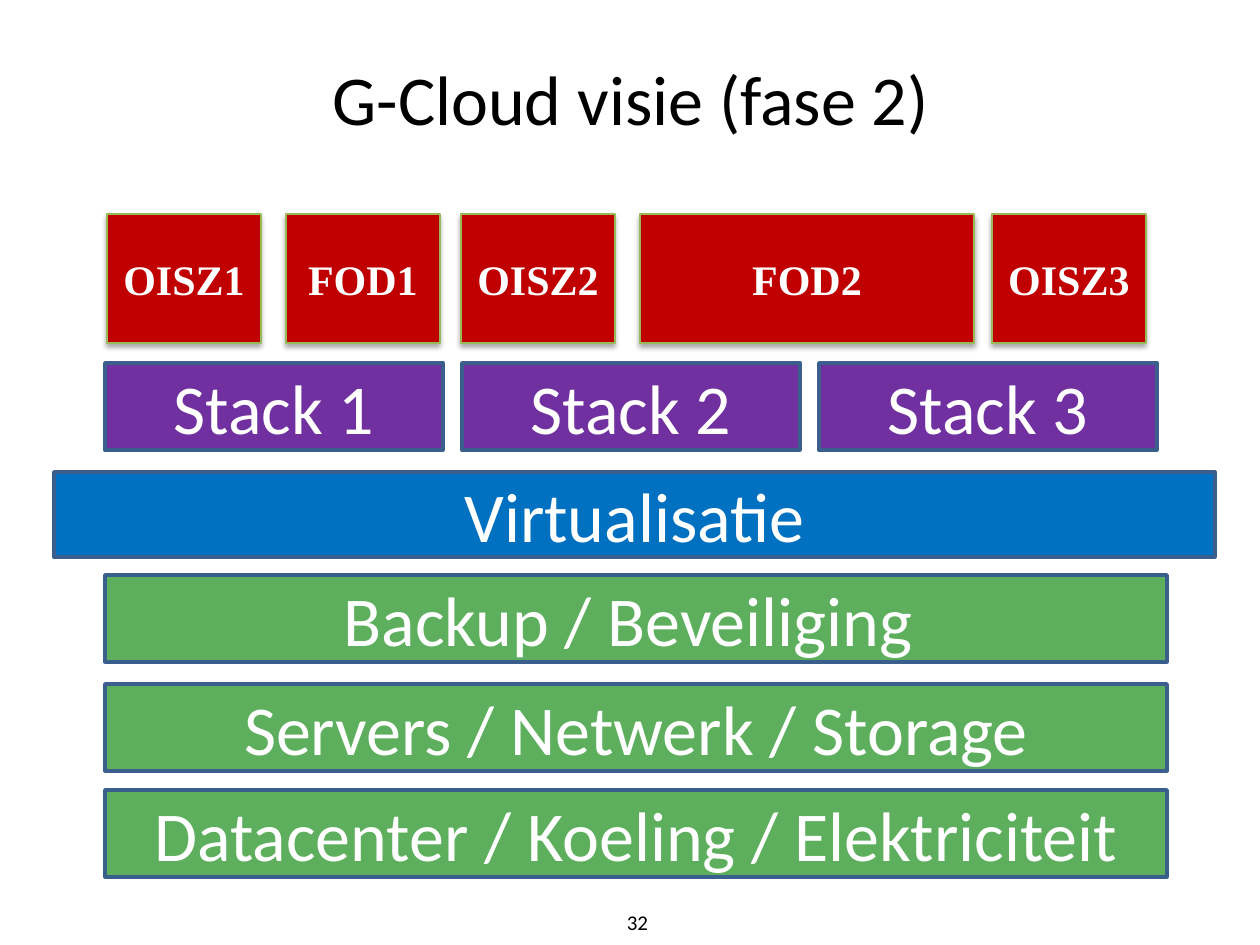
from dataclasses import dataclass

import pptx
import pptx.dml.color
import pptx.enum.shapes
import pptx.enum.text
import pptx.oxml
import pptx.oxml.ns
import pptx.util

SCALE = 914400 / 126  # EMU in one px


@dataclass(frozen=True)
class Theme:
    sans: str = "Calibri"
    serif: str = "Times New Roman"
    black: str = "000000"
    white: str = "FFFFFF"
    red: str = "C00000"
    purple: str = "7030A0"
    blue: str = "0070C0"
    green: str = "5DAF5D"
    edge: str = "3A5F8C"
    lime: str = "98B955"
    big: int = 40
    mid: int = 24
    small: int = 12


@dataclass(frozen=True)
class Box:
    text: str
    left: int
    top: int
    width: int
    height: int


@dataclass(frozen=True)
class Style:
    fill: str
    line: str
    weight: float
    font: str
    size: int
    bold: bool = False
    shadow: bool = False


THEME = Theme()


def emu(px: int) -> int:
    return round(px * SCALE)


def color(code: str) -> pptx.dml.color.RGBColor:
    return pptx.dml.color.RGBColor.from_string(code)


def place(shape, box: Box) -> None:
    shape.left, shape.top = emu(box.left), emu(box.top)
    shape.width, shape.height = emu(box.width), emu(box.height)


def write(shape, text: str, font: str, size: int, code: str, bold: bool = False) -> None:
    frame = shape.text_frame
    frame.text = text
    frame.word_wrap = True
    frame.auto_size = pptx.enum.text.MSO_AUTO_SIZE.NONE
    frame.vertical_anchor = pptx.enum.text.MSO_ANCHOR.MIDDLE
    line = frame.paragraphs[0]
    line.alignment = pptx.enum.text.PP_ALIGN.CENTER
    face = line.runs[0].font
    face.name, face.size, face.bold = font, pptx.util.Pt(size), bold
    face.color.rgb = color(code)


def cast(shape) -> None:
    """Put a soft shadow below the shape."""
    blur, dist = pptx.util.Pt(3.1), pptx.util.Pt(1.8)
    effect = shape._element.spPr.find(pptx.oxml.ns.qn("a:effectLst"))
    effect.append(pptx.oxml.parse_xml(
        f'<a:outerShdw {pptx.oxml.ns.nsdecls("a")} blurRad="{blur}" dist="{dist}" '
        f'dir="5400000" rotWithShape="0"><a:srgbClr val="{THEME.black}">'
        '<a:alpha val="35000"/></a:srgbClr></a:outerShdw>'))


def draw(slide, box: Box, style: Style) -> None:
    shape = slide.shapes.add_shape(
        pptx.enum.shapes.MSO_SHAPE.RECTANGLE, 0, 0, 0, 0)
    place(shape, box)
    shape.shadow.inherit = False
    shape.fill.solid()
    shape.fill.fore_color.rgb = color(style.fill)
    shape.line.color.rgb = color(style.line)
    shape.line.width = pptx.util.Pt(style.weight)
    if style.shadow:
        cast(shape)
    write(shape, box.text, style.font, style.size, THEME.white, style.bold)


def layer(fill: str) -> Style:
    return Style(fill, THEME.edge, 2, THEME.sans, THEME.big)


def main() -> None:
    deck = pptx.Presentation()
    deck.slide_width, deck.slide_height = emu(1260), emu(945)
    slide = deck.slides.add_slide(deck.slide_layouts[5])

    # Title and page number
    head = Box("G-Cloud visie (fase 2)", 35, 18, 1191, 158)
    place(slide.shapes.title, head)
    write(slide.shapes.title, head.text, THEME.sans, THEME.big, THEME.black)
    page = Box("32", 586, 900, 103, 45)
    label = slide.shapes.add_textbox(0, 0, 0, 0)
    place(label, page)
    write(label, page.text, THEME.sans, THEME.small, THEME.black)

    # Shared base layers
    for text, top in (("Datacenter / Koeling / Elektriciteit", 790),
                      ("Servers / Netwerk / Storage", 684),
                      ("Backup / Beveiliging ", 575)):
        draw(slide, Box(text, 105, top, 1062, 87), layer(THEME.green))
    draw(slide, Box("Virtualisatie", 54, 472, 1161, 85), layer(THEME.blue))

    # Tenants on top
    tenant = Style(THEME.red, THEME.lime, 0.75, THEME.serif, THEME.mid, True, True)
    for text, left, width in (("OISZ1", 107, 154), ("FOD1", 286, 154),
                              ("OISZ2", 461, 154), ("FOD2", 640, 334),
                              ("OISZ3", 992, 154)):
        draw(slide, Box(text, left, 214, width, 129), tenant)

    # Stacks
    for i in range(3):
        draw(slide, Box(f"Stack {i + 1}", 105 + 357 * i, 363, 338, 87),
             layer(THEME.purple))

    deck.save("out.pptx")


if __name__ == "__main__":
    main()
